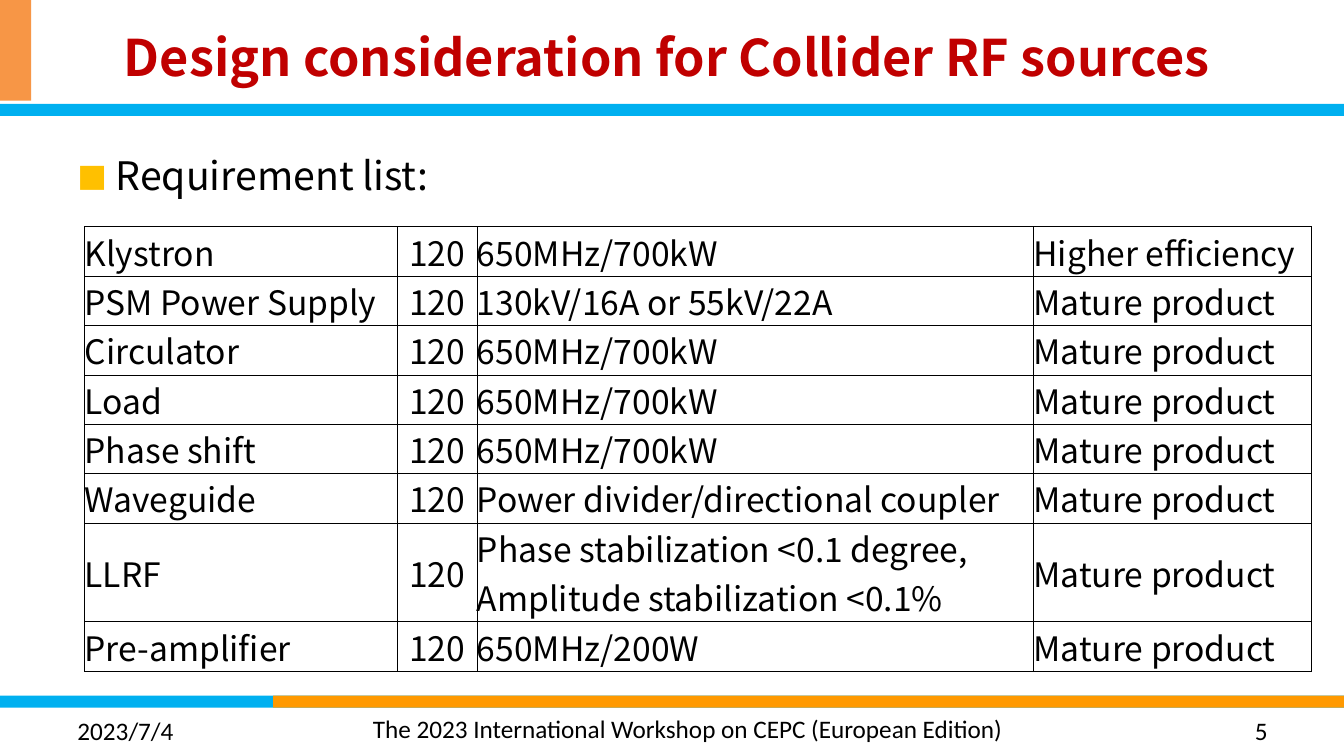
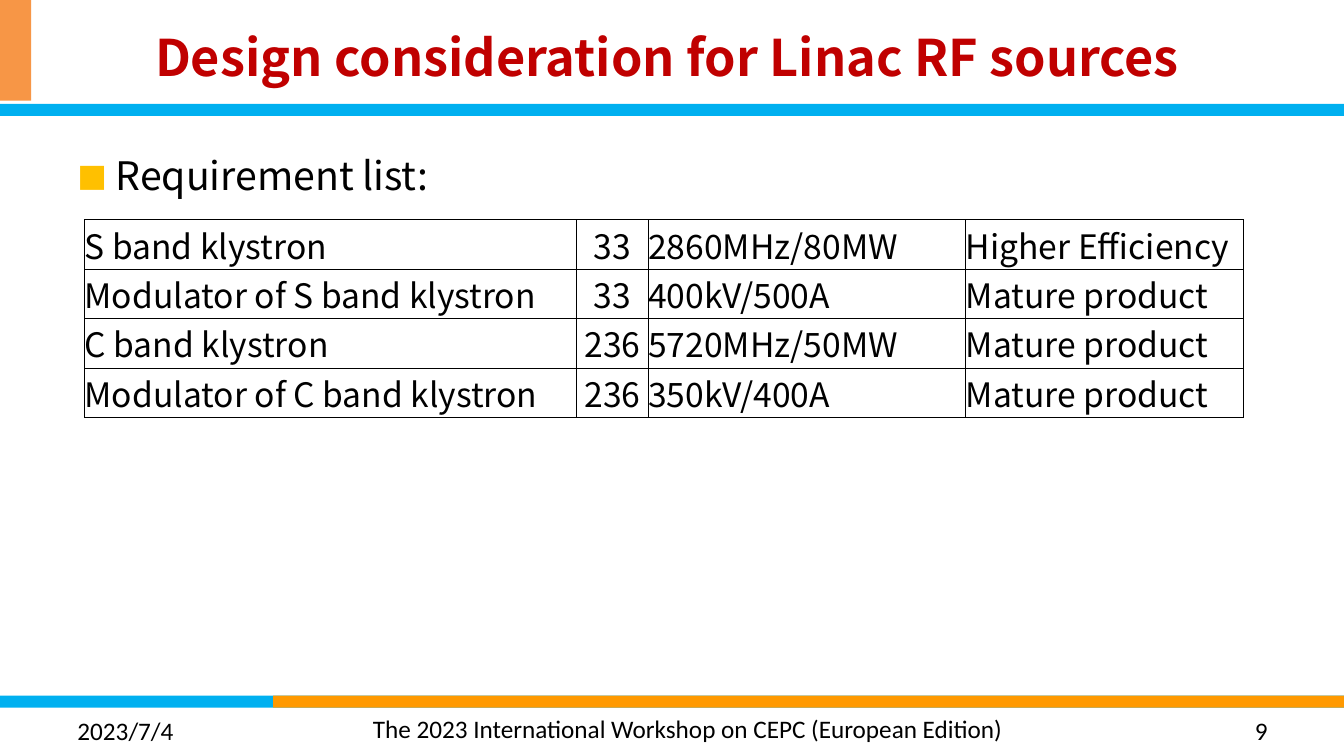
"""Builds two slides listing the requirements for collider and linac RF sources."""
from lxml.etree import SubElement
from pptx import Presentation
from pptx.dml.color import RGBColor
from pptx.enum.shapes import MSO_SHAPE
from pptx.enum.text import MSO_ANCHOR, PP_ALIGN
from pptx.oxml import parse_xml
from pptx.oxml.ns import nsdecls, qn
from pptx.util import Inches, Pt

COLORS = {
    "text": "000000",
    "title": "C00000",
    "blue": "00B0F0",
    "orange": "FF9900",
    "corner": "F79646",
    "bullet": "FFC000",
}
MAIN_FONT, FOOTER_FONT = "Noto Sans CJK SC", "Calibri"
LINE_HEIGHT = 0.49
FOOTER = "The 2023 International Workshop on CEPC (European Edition)"
BANDS = [
    (0, 6.9, 13.33, 0.12, "blue"),
    (2.71, 6.9, 10.63, 0.12, "orange"),
    (0, 1.03, 13.33, 0.12, "blue"),
    (0, 0, 0.31, 1, "corner"),
]
SLIDES = [
    {
        "title": "Design consideration for Collider RF sources",
        "number": "5",
        "top": 2.25,
        "columns": [3.1, 0.79, 5.52, 2.76],
        "rows": [
            ("Klystron", "120", "650MHz/700kW", "Higher efficiency"),
            ("PSM Power Supply", "120", "130kV/16A or 55kV/22A", "Mature product"),
            ("Circulator", "120", "650MHz/700kW", "Mature product"),
            ("Load", "120", "650MHz/700kW", "Mature product"),
            ("Phase shift", "120", "650MHz/700kW", "Mature product"),
            ("Waveguide", "120", "Power divider/directional coupler", "Mature product"),
            ("LLRF", "120", "Phase stabilization <0.1 degree,\nAmplitude stabilization <0.1%",
             "Mature product"),
            ("Pre-amplifier", "120", "650MHz/200W", "Mature product"),
        ],
    },
    {
        "title": "Design consideration for Linac RF sources",
        "number": "9",
        "top": 2.18,
        "columns": [4.88, 0.71, 3.15, 2.75],
        "rows": [
            ("S band klystron", "33", "2860MHz/80MW", "Higher Efficiency"),
            ("Modulator of S band klystron", "33", "400kV/500A", "Mature product"),
            ("C band klystron", "236", "5720MHz/50MW", "Mature product"),
            ("Modulator of C band klystron", "236", "350kV/400A", "Mature product"),
        ],
    },
]


def write_text(frame, text, size, font, align=PP_ALIGN.LEFT, color="text", bold=False):
    frame.text = text
    for paragraph in frame.paragraphs:
        paragraph.alignment = align
        paragraph.font.size = Pt(size)
        paragraph.font.name = font
        paragraph.font.bold = bold
        paragraph.font.color.rgb = RGBColor.from_string(COLORS[color])


def add_text(slide, box, *style, **options):
    frame = slide.shapes.add_textbox(*map(Inches, box)).text_frame
    frame.word_wrap = True
    write_text(frame, *style, **options)
    return frame


presentation = Presentation()
presentation.slide_width, presentation.slide_height = Inches(13.33), Inches(7.5)

for content in SLIDES:
    slide = presentation.slides.add_slide(presentation.slide_layouts[6])

    for left, top, width, height, color in BANDS:
        band = slide.shapes.add_shape(
            MSO_SHAPE.RECTANGLE, Inches(left), Inches(top), Inches(width), Inches(height))
        band.shadow.inherit = False
        band.fill.solid()
        band.fill.fore_color.rgb = RGBColor.from_string(COLORS[color])
        band.line.fill.background()

    add_text(slide, (3.6, 7.03, 6.67, 0.4), FOOTER, 18, FOOTER_FONT)
    add_text(slide, (0.67, 7.05, 3.11, 0.4), "2023/7/4", 18, FOOTER_FONT)
    add_text(slide, (9.56, 7.05, 3.11, 0.4), content["number"], 18, FOOTER_FONT, PP_ALIGN.RIGHT)
    title = add_text(slide, (0.73, 0.16, 11.77, 0.79), content["title"], 36, MAIN_FONT,
                     PP_ALIGN.CENTER, color="title", bold=True)
    title.vertical_anchor = MSO_ANCHOR.MIDDLE

    heading = add_text(slide, (0.67, 1.41, 12, 0.85), "Requirement list:", 28, MAIN_FONT,
                       PP_ALIGN.JUSTIFY).paragraphs[0]
    heading.line_spacing = 1.1
    heading.space_after = Pt(10)
    properties = heading._p.get_or_add_pPr()
    properties.set("marL", str(Inches(0.38)))
    properties.set("indent", str(Inches(-0.38)))
    default_run = properties.find(qn("a:defRPr"))
    for bullet_xml in (
        f'<a:buClr {nsdecls("a")}><a:srgbClr val="{COLORS["bullet"]}"/></a:buClr>',
        f'<a:buSzPct {nsdecls("a")} val="80000"/>',
        f'<a:buFont {nsdecls("a")} typeface="{FOOTER_FONT}"/>',
        f'<a:buChar {nsdecls("a")} char="■"/>',
    ):
        default_run.addprevious(parse_xml(bullet_xml))

    rows, columns = content["rows"], content["columns"]
    heights = [LINE_HEIGHT * max(len(value.splitlines()) for value in values) for values in rows]
    table = slide.shapes.add_table(
        len(rows), len(columns), Inches(0.84), Inches(content["top"]),
        Inches(sum(columns)), Inches(sum(heights))).table
    table.first_row = table.horz_banding = False
    for column, width in zip(table.columns, columns):
        column.width = Inches(width)
    for row, height, values in zip(table.rows, heights, rows):
        row.height = Inches(height)
        for index, (cell, value) in enumerate(zip(row.cells, values)):
            align = PP_ALIGN.CENTER if index == 1 else PP_ALIGN.LEFT
            write_text(cell.text_frame, value, 24, MAIN_FONT, align)
            cell.vertical_anchor = MSO_ANCHOR.MIDDLE
            cell.margin_left = cell.margin_right = cell.margin_top = cell.margin_bottom = 0
            for side in "LRTB":
                thick = (index, side) in ((2, "R"), (3, "L"))
                border = SubElement(cell._tc.get_or_add_tcPr(), qn(f"a:ln{side}"),
                                    w=str(Pt(1 if thick else 0.5)))
                fill = SubElement(border, qn("a:solidFill"))
                SubElement(fill, qn("a:srgbClr"), val=COLORS["text"])
            cell.fill.background()

presentation.save("out.pptx")
